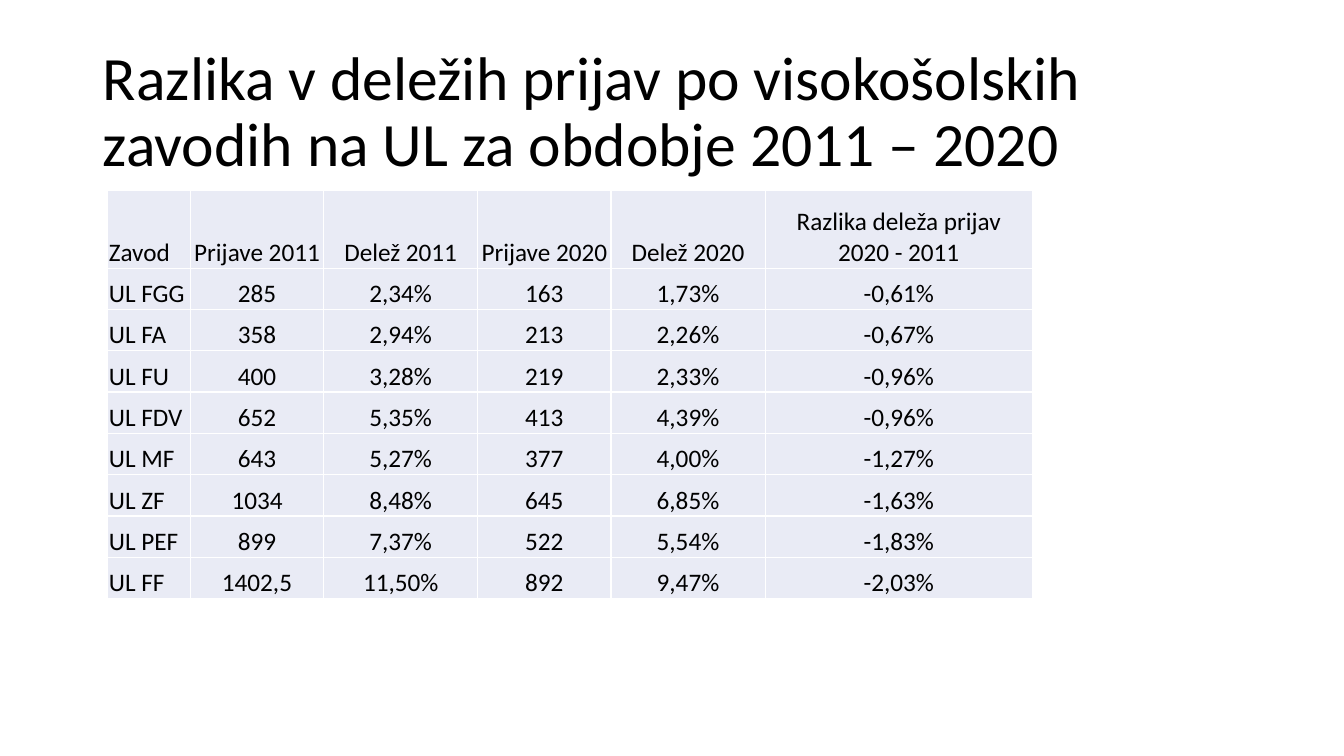
from lxml.etree import SubElement
from pptx import Presentation
from pptx.dml.color import RGBColor
from pptx.enum.text import MSO_ANCHOR, MSO_AUTO_SIZE, PP_ALIGN
from pptx.oxml.ns import qn
from pptx.util import Inches, Pt

TITLE = "Razlika v deležih prijav po visokošolskih zavodih na UL za obdobje 2011 – 2020"
ROWS = [
    ("Zavod", "Prijave 2011", "Delež 2011", "Prijave 2020", "Delež 2020",
     "Razlika deleža prijav\n2020 - 2011"),
    ("UL FGG", "285", "2,34%", "163", "1,73%", "-0,61%"),
    ("UL FA", "358", "2,94%", "213", "2,26%", "-0,67%"),
    ("UL FU", "400", "3,28%", "219", "2,33%", "-0,96%"),
    ("UL FDV", "652", "5,35%", "413", "4,39%", "-0,96%"),
    ("UL MF", "643", "5,27%", "377", "4,00%", "-1,27%"),
    ("UL ZF", "1034", "8,48%", "645", "6,85%", "-1,63%"),
    ("UL PEF", "899", "7,37%", "522", "5,54%", "-1,83%"),
    ("UL FF", "1402,5", "11,50%", "892", "9,47%", "-2,03%"),
]
COLUMN_WIDTHS = [0.82, 1.32, 1.53, 1.32, 1.53, 2.65]
HEADER_HEIGHT, ROW_HEIGHT = 0.77, 0.41
COLORS = {"text": "000000", "cell": "E9EBF5", "border": "FFFFFF"}
FONT = "Calibri"


def add_run(paragraph, text, size):
    run = paragraph.add_run()
    run.text = text
    run.font.name = FONT
    run.font.size = Pt(size)
    run.font.bold = False
    run.font.color.rgb = RGBColor.from_string(COLORS["text"])


def add_borders(cell):
    properties = cell._tc.get_or_add_tcPr()
    for side in ("lnL", "lnR", "lnT", "lnB"):
        line = SubElement(properties, qn(f"a:{side}"), w=str(Pt(1)))
        fill = SubElement(line, qn("a:solidFill"))
        SubElement(fill, qn("a:srgbClr"), val=COLORS["border"])


def fill_cell(cell, text, alignment):
    add_borders(cell)
    cell.fill.solid()
    cell.fill.fore_color.rgb = RGBColor.from_string(COLORS["cell"])
    cell.vertical_anchor = MSO_ANCHOR.BOTTOM
    cell.margin_left = cell.margin_right = cell.margin_top = Inches(0.01)
    cell.margin_bottom = 0
    frame = cell.text_frame
    for index, line in enumerate(text.split("\n")):
        paragraph = frame.add_paragraph() if index else frame.paragraphs[0]
        paragraph.alignment = alignment
        add_run(paragraph, line, 18)


def add_title(slide):
    title = slide.shapes.title
    title.left, title.top = Inches(0.92), Inches(0.4)
    title.width, title.height = Inches(11.5), Inches(1.45)
    frame = title.text_frame
    frame.word_wrap = True
    frame.auto_size = MSO_AUTO_SIZE.NONE
    frame.vertical_anchor = MSO_ANCHOR.MIDDLE
    paragraph = frame.paragraphs[0]
    paragraph.alignment = PP_ALIGN.LEFT
    paragraph.line_spacing = 0.9
    add_run(paragraph, TITLE, 44)


def add_applications_table(slide):
    heights = [HEADER_HEIGHT] + [ROW_HEIGHT] * (len(ROWS) - 1)
    table = slide.shapes.add_table(
        len(ROWS), len(COLUMN_WIDTHS), Inches(1.07), Inches(1.89),
        Inches(sum(COLUMN_WIDTHS)), Inches(sum(heights))).table
    table.first_row = False
    table.horz_banding = False
    for column, width in zip(table.columns, COLUMN_WIDTHS):
        column.width = Inches(width)
    for row, height, values in zip(table.rows, heights, ROWS):
        row.height = Inches(height)
        for index, (cell, text) in enumerate(zip(row.cells, values)):
            fill_cell(cell, text, PP_ALIGN.CENTER if index else PP_ALIGN.LEFT)


def main():
    presentation = Presentation()
    presentation.slide_width = Inches(13.33)
    presentation.slide_height = Inches(7.5)
    slide = presentation.slides.add_slide(presentation.slide_layouts[5])
    add_title(slide)
    add_applications_table(slide)
    presentation.save("out.pptx")


if __name__ == "__main__":
    main()
